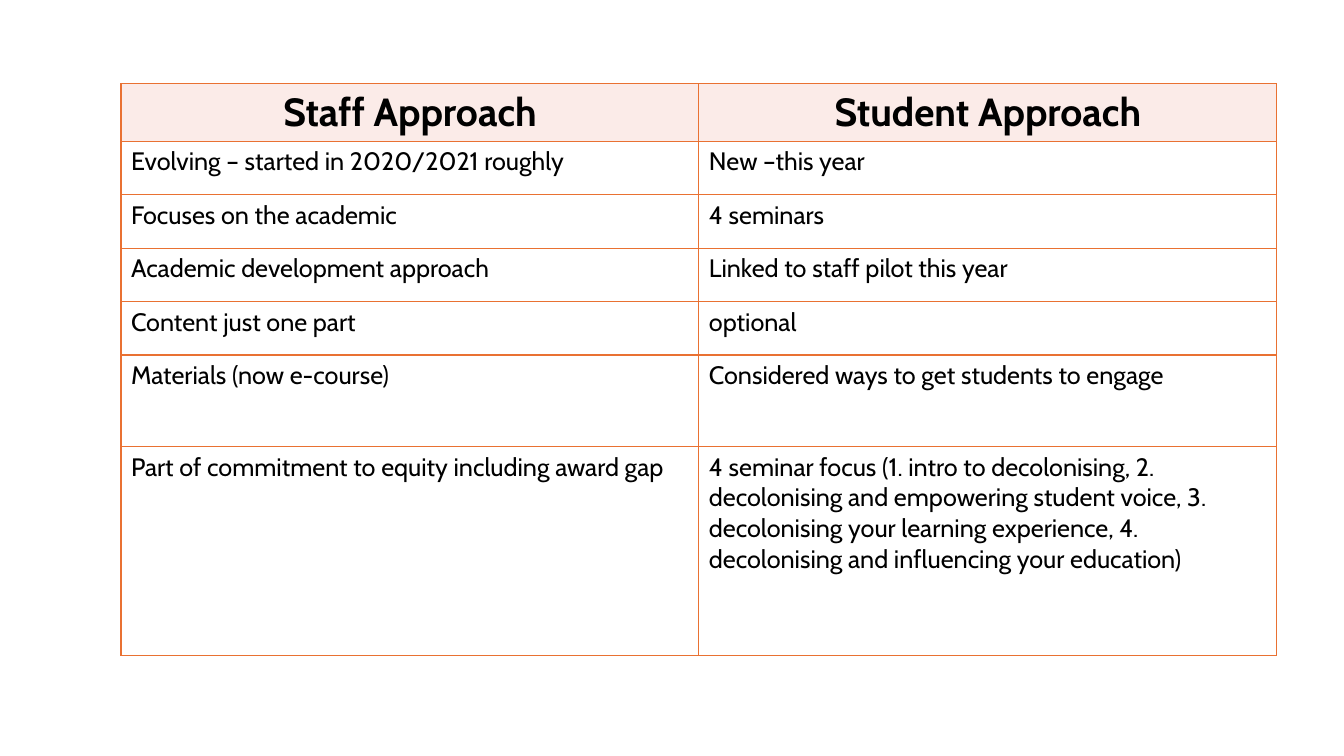
"""Build a slide with a table comparing the staff and student approaches."""
from dataclasses import dataclass

from lxml.etree import SubElement
from pptx import Presentation
from pptx.dml.color import RGBColor
from pptx.enum.text import PP_ALIGN
from pptx.oxml.ns import qn
from pptx.table import _Cell
from pptx.util import Inches, Length, Pt

BLACK = RGBColor(0x00, 0x00, 0x00)
ORANGE = RGBColor(0xE9, 0x71, 0x32)
BLUSH = RGBColor(0xFB, 0xEB, 0xE8)
FONT = "Cabin"
SLIDE_W, SLIDE_H = 13.33, 7.5
LEFT, TOP, WIDTH = 9, 11.07, 86


@dataclass(frozen=True)
class Row:
    """A table row, its height in percent of the slide's height."""

    staff: str
    student: str
    height: float = 7.07
    header: bool = False


ROWS = [
    Row("Staff Approach", "Student Approach", 7.33, header=True),
    Row("Evolving – started in 2020/2021 roughly", "New –this year"),
    Row("Focuses on the academic", "4 seminars"),
    Row("Academic development approach", "Linked to staff pilot this year"),
    Row("Content just one part", "optional"),
    Row("Materials (now e-course)", "Considered ways to get students to engage", 12.13),
    Row(
        "Part of commitment to equity including award gap",
        "4 seminar focus (1. intro to decolonising, 2. decolonising and "
        "empowering student voice, 3. decolonising your learning experience, "
        "4. decolonising and influencing your education)",
        27.6,
    ),
]


def across(percent: float) -> Length:
    """Turn a percentage of the slide's width into a length."""
    return Inches(SLIDE_W * percent / 100)


def down(percent: float) -> Length:
    """Turn a percentage of the slide's height into a length."""
    return Inches(SLIDE_H * percent / 100)


def add_borders(cell: _Cell) -> None:
    """Draw a thin orange line on every side of a cell."""
    props = cell._tc.get_or_add_tcPr()
    for side in ("lnL", "lnR", "lnT", "lnB"):
        line = SubElement(props, qn(f"a:{side}"), w=str(Pt(1)))
        fill = SubElement(line, qn("a:solidFill"))
        SubElement(fill, qn("a:srgbClr"), val=str(ORANGE))


def fill_cell(cell: _Cell, text: str, header: bool) -> None:
    """Write and style one cell."""
    add_borders(cell)
    if header:
        cell.fill.solid()
        cell.fill.fore_color.rgb = BLUSH
    else:
        cell.fill.background()
    cell.text = text
    p = cell.text_frame.paragraphs[0]
    p.alignment = PP_ALIGN.CENTER if header else PP_ALIGN.LEFT
    p.font.name = FONT
    p.font.size = Pt(28 if header else 18)
    p.font.bold = header
    p.font.color.rgb = BLACK


def main() -> None:
    """Create the presentation and save it."""
    prs = Presentation()
    prs.slide_width, prs.slide_height = Inches(SLIDE_W), Inches(SLIDE_H)
    s = prs.slides.add_slide(prs.slide_layouts[6])
    height = sum(row.height for row in ROWS)
    table = s.shapes.add_table(
        len(ROWS), 2, across(LEFT), down(TOP), across(WIDTH), down(height)
    ).table
    for i, row in enumerate(ROWS):
        table.rows[i].height = down(row.height)
        for j, text in enumerate((row.staff, row.student)):
            fill_cell(table.cell(i, j), text, row.header)
    prs.save("out.pptx")


if __name__ == "__main__":
    main()
